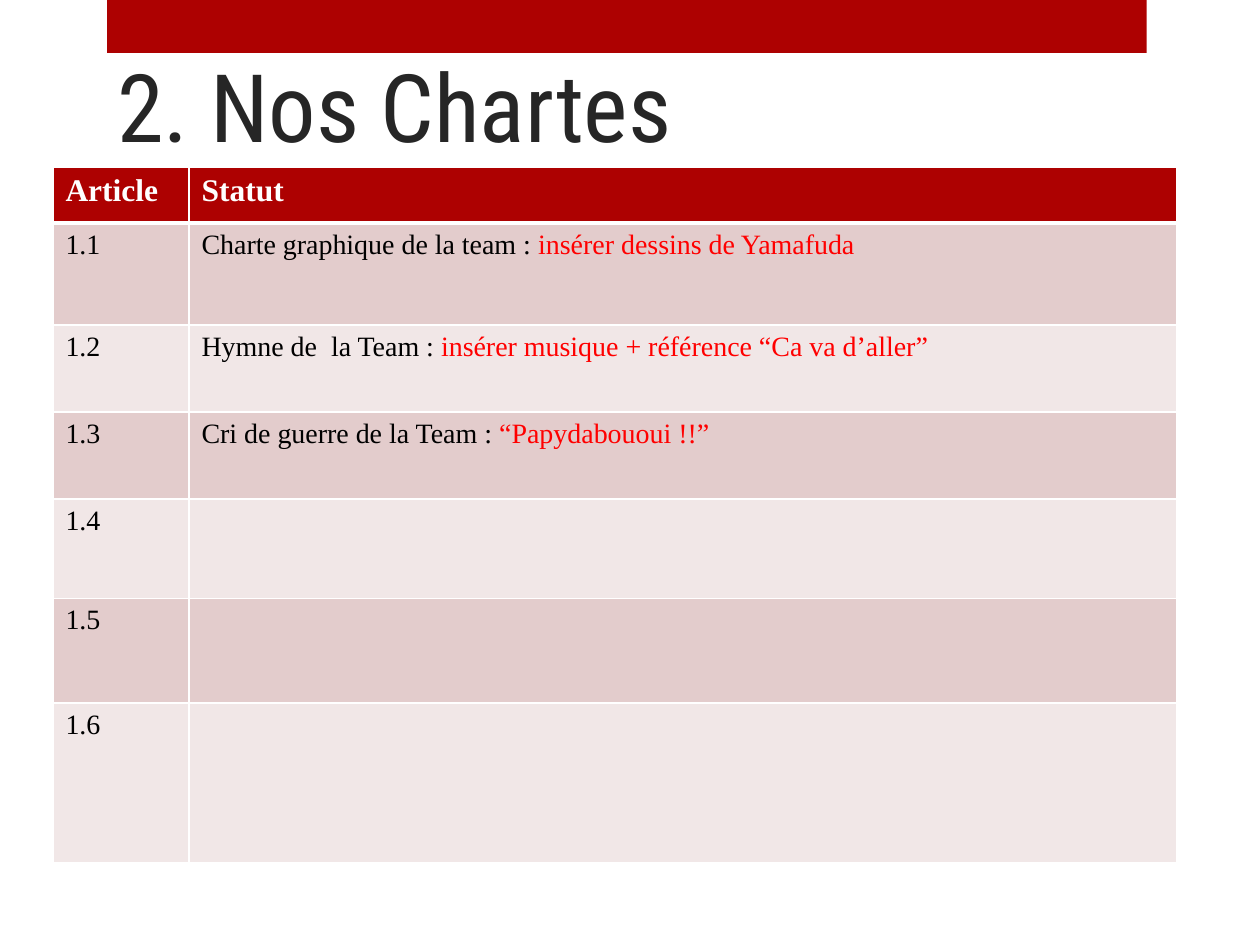
from lxml.etree import SubElement
from pptx import Presentation
from pptx.dml.color import RGBColor
from pptx.enum.shapes import MSO_SHAPE as Shape
from pptx.enum.text import MSO_ANCHOR as Anchor, MSO_AUTO_SIZE as AutoSize, PP_ALIGN as Align
from pptx.oxml.ns import qn
from pptx.util import Inches, Pt

# Content
TITLE = "2. Nos Chartes"
HEADER = ("Article", "Statut")
ARTICLES = [
    ("1.1", "Charte graphique de la team : ", "insérer dessins de Yamafuda"),
    ("1.2", "Hymne de  la Team : ", "insérer musique + référence “Ca va d’aller”"),
    ("1.3", "Cri de guerre de la Team : ", "“Papydabououi !!”"),
    ("1.4", "", ""),
    ("1.5", "", ""),
    ("1.6", "", ""),
]
COLUMN_WIDTHS = (1.08, 7.84)
ROW_HEIGHTS = (0.44, 0.81, 0.69, 0.69, 0.79, 0.83, 1.27)
COLORS = {
    "accent": "AD0101", "title": "262626", "white": "FFFFFF", "black": "000000",
    "highlight": "FF0000", "dark band": "E3CCCC", "light band": "F1E7E7",
}


def color(name):
    return RGBColor.from_string(COLORS[name])


def add_text(para, text, size=16, font="Times New Roman", ink="black", bold=False):
    span = para.add_run()
    span.text = text
    span.font.size = Pt(size)
    span.font.name = font
    span.font.bold = bold
    span.font.color.rgb = color(ink)


def format_cell(cell, fill, bottom_width=1):
    """Draw the white borders, then the fill, in the order the schema asks for."""
    properties = cell._tc.get_or_add_tcPr()
    for side, width in (("L", 1), ("R", 1), ("T", 1), ("B", bottom_width)):
        line = SubElement(properties, qn(f"a:ln{side}"), w=str(Pt(width)))
        solid = SubElement(line, qn("a:solidFill"))
        SubElement(solid, qn("a:srgbClr"), val=COLORS["white"])
    cell.fill.solid()
    cell.fill.fore_color.rgb = color(fill)


deck = Presentation()
deck.slide_width, deck.slide_height = Inches(10), Inches(7.5)
page = deck.slides.add_slide(deck.slide_layouts[5])

# Top band
band = page.shapes.add_shape(Shape.RECTANGLE, Inches(0.85), 0, Inches(8.25), Inches(0.42))
band.shadow.inherit = False
band.fill.solid()
band.fill.fore_color.rgb = color("accent")
band.line.fill.background()

# Title
title = page.shapes.title
title.left, title.top = Inches(0.83), Inches(-0.42)
title.width, title.height = Inches(7.42), Inches(1.75)
frame = title.text_frame
frame.word_wrap = True
frame.auto_size = AutoSize.NONE
frame.vertical_anchor = Anchor.BOTTOM
frame.paragraphs[0].alignment = Align.LEFT
add_text(frame.paragraphs[0], TITLE, size=54, font="Roboto Condensed", ink="title")

# Table of articles
table = page.shapes.add_table(
    len(ROW_HEIGHTS), len(COLUMN_WIDTHS), Inches(0.42), Inches(1.33),
    Inches(sum(COLUMN_WIDTHS)), Inches(sum(ROW_HEIGHTS))).table
for column, width in zip(table.columns, COLUMN_WIDTHS):
    column.width = Inches(width)
for row, height in zip(table.rows, ROW_HEIGHTS):
    row.height = Inches(height)

for cell, label in zip(table.rows[0].cells, HEADER):
    format_cell(cell, "accent", bottom_width=3)
    add_text(cell.text_frame.paragraphs[0], label, size=18, ink="white", bold=True)

for index, (number, subject, status) in enumerate(ARTICLES, start=1):
    number_cell, status_cell = table.rows[index].cells
    for cell in (number_cell, status_cell):
        # The first row keeps the header's thick line above it
        format_cell(cell, "dark band" if index % 2 else "light band")
        if index == 1:
            cell._tc.tcPr.find(qn("a:lnT")).set("w", str(Pt(3)))
    add_text(number_cell.text_frame.paragraphs[0], number)
    if subject:
        para = status_cell.text_frame.paragraphs[0]
        add_text(para, subject)
        add_text(para, status, ink="highlight")

deck.save("out.pptx")
